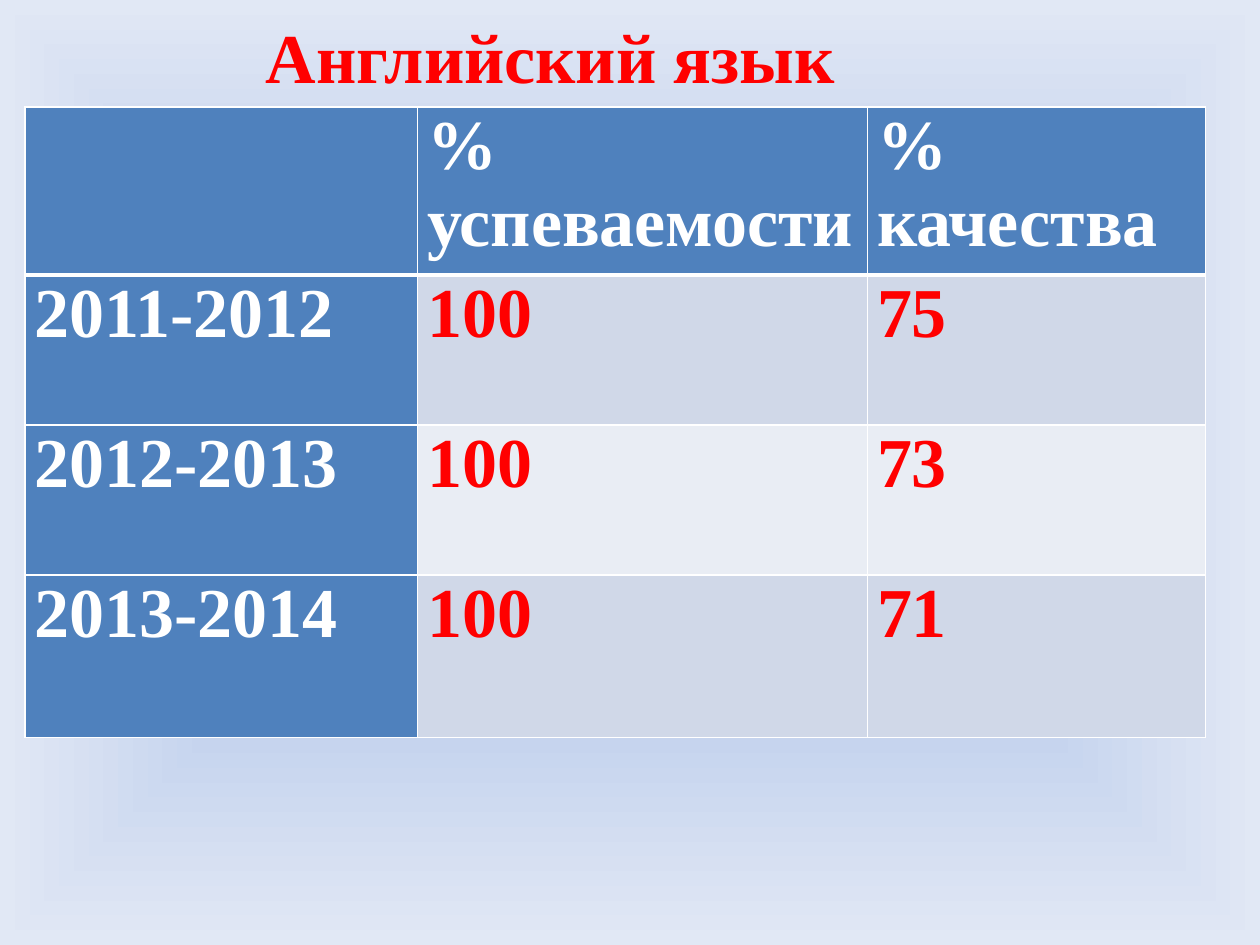
from pptx import Presentation
from pptx import util as u
from pptx.dml.color import RGBColor
from pptx.enum import text
from pptx.oxml import parse_xml
from pptx.oxml.ns import nsdecls

RED, WHITE, BLUE = "FF0000", "FFFFFF", "4F81BD"
BANDS = ("D0D8E8", "E9EDF4")
BACKGROUND_STOPS = ((0, "CCC1DA"), (50, "C2D1ED"), (100, "E1E8F5"))
FONT = {"name": "Times New Roman", "size": u.Pt(40), "bold": True}
RESULTS = (
    ("", "% успеваемости", "% качества"),
    ("2011-2012", "100", "75"),
    ("2012-2013", "100", "73"),
    ("2013-2014", "100", "71"),
)
COLUMN_WIDTHS = (7.92, 9.07, 6.81)
ROW_HEIGHTS = (3.38, 3.02, 3.02, 3.28)


def rgb(color):
    return RGBColor.from_string(color)


def set_format(target, values):
    for name, value in values.items():
        setattr(target, name, value)


def write(frame, words, color):
    paragraph = frame.paragraphs[0]
    paragraph.text = words
    # Paragraph and run carry the same look, so empty cells match too
    for font in [paragraph.font] + [run.font for run in paragraph.runs]:
        set_format(font, FONT)
        font.color.rgb = rgb(color)


def paint_background(slide):
    stops = "".join(
        f'<a:gs pos="{place * 1000}"><a:srgbClr val="{color}"/></a:gs>'
        for place, color in BACKGROUND_STOPS)
    slide.element.cSld.insert(0, parse_xml(
        f'<p:bg {nsdecls("p", "a")}><p:bgPr><a:gradFill rotWithShape="1">'
        f'<a:gsLst>{stops}</a:gsLst><a:path path="shape">'
        '<a:fillToRect l="50000" t="50000" r="50000" b="50000"/></a:path>'
        '</a:gradFill><a:effectLst/></p:bgPr></p:bg>'))


def add_heading(slide, left, top, width, height):
    heading = slide.shapes.add_textbox(
        u.Cm(left), u.Cm(top), u.Cm(width), u.Cm(height)).text_frame
    set_format(heading, {"word_wrap": False,
                         "auto_size": text.MSO_AUTO_SIZE.SHAPE_TO_FIT_TEXT})
    write(heading, "Английский язык", RED)


def add_borders(cell, bottom):
    properties = cell._tc.get_or_add_tcPr()
    widths = {"lnL": 1, "lnR": 1, "lnT": 1, "lnB": bottom}
    # Borders come before the fill in the cell properties
    for place, (side, points) in enumerate(widths.items()):
        properties.insert(place, parse_xml(
            f'<a:{side} {nsdecls("a")} w="{u.Pt(points)}"><a:solidFill>'
            f'<a:srgbClr val="{WHITE}"/></a:solidFill></a:{side}>'))


def add_results(slide, left, top):
    results = slide.shapes.add_table(
        len(ROW_HEIGHTS), len(COLUMN_WIDTHS), u.Cm(left), u.Cm(top),
        u.Cm(sum(COLUMN_WIDTHS)), u.Cm(sum(ROW_HEIGHTS))).table
    for column, width in zip(results.columns, COLUMN_WIDTHS):
        column.width = u.Cm(width)
    for r, (row, height) in enumerate(zip(results.rows, ROW_HEIGHTS)):
        row.height = u.Cm(height)
        for c, cell in enumerate(row.cells):
            is_header = r == 0 or c == 0
            set_format(cell, {"margin_left": u.Cm(0.19), "margin_right": u.Cm(0.19),
                              "margin_top": 0, "margin_bottom": 0})
            write(cell.text_frame, RESULTS[r][c], WHITE if is_header else RED)
            cell.fill.solid()
            cell.fill.fore_color.rgb = rgb(BLUE if is_header else BANDS[(r - 1) % 2])
            add_borders(cell, bottom=3 if r == 0 else 1)


def main():
    deck = Presentation()
    set_format(deck, {"slide_width": u.Cm(25.4), "slide_height": u.Cm(19.05)})
    slide = deck.slides.add_slide(deck.slide_layouts[6])
    paint_background(slide)
    add_heading(slide, 5.11, 0.15, 12.09, 1.96)
    add_results(slide, 0.5, 2.16)
    deck.save("out.pptx")


if __name__ == "__main__":
    main()
